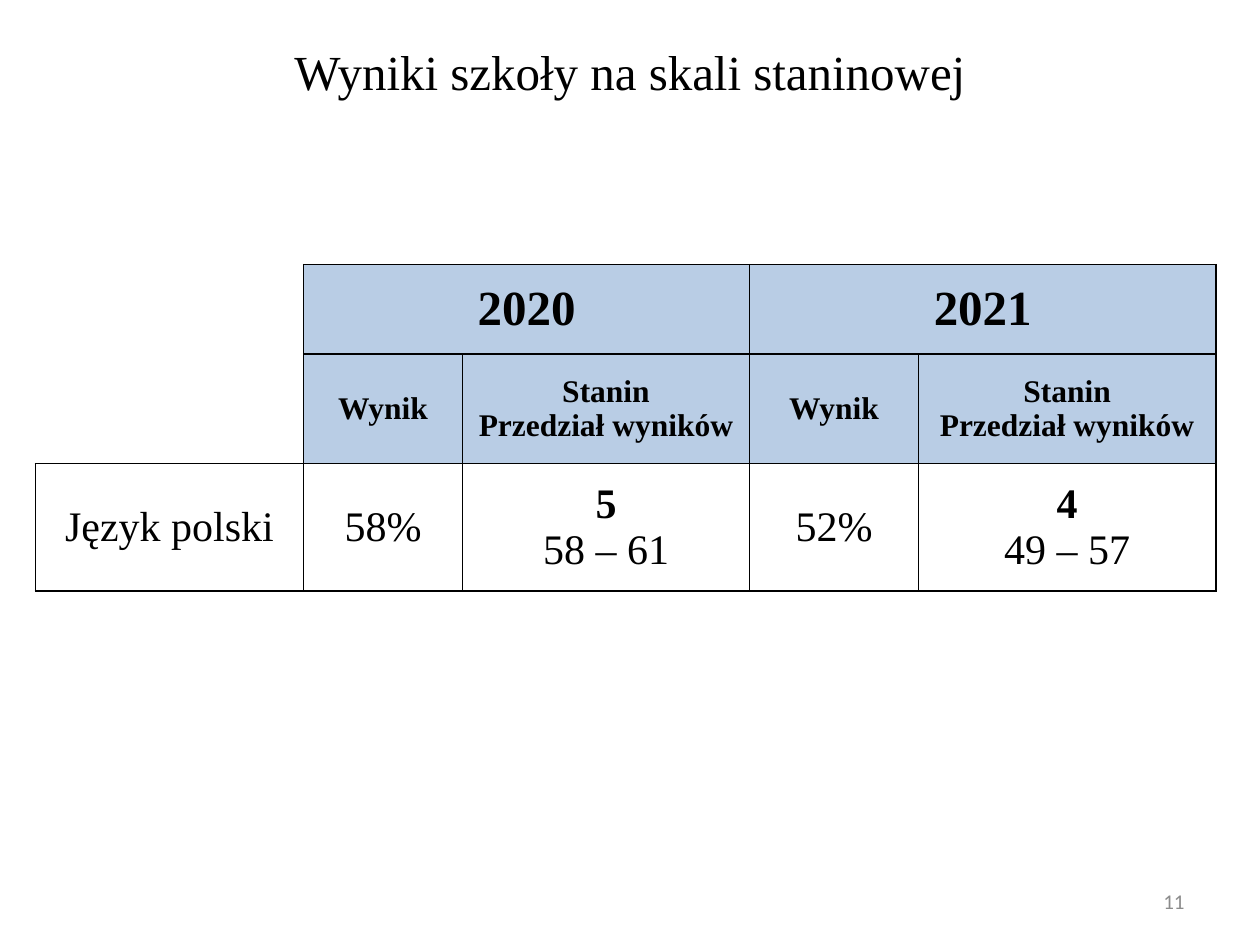
from lxml import etree
from pptx import Presentation
from pptx import util as u
from pptx.dml.color import RGBColor
from pptx.enum import text
from pptx.oxml.ns import qn

BLACK = RGBColor(0x00, 0x00, 0x00)
GREY = RGBColor(0x8C, 0x8C, 0x8C)
BLUE = RGBColor(0xB9, 0xCD, 0xE5)

MID = text.MSO_ANCHOR.MIDDLE
CENTER, RIGHT = text.PP_ALIGN.CENTER, text.PP_ALIGN.RIGHT
SIDES = ("left", "top", "right", "bottom")


class Deck:
    """Holds the text style and the current slide."""

    base = {"name": "Times New Roman", "size": u.Pt(24), "bold": False}

    def __init__(self, wide, high):
        self.prs = Presentation()
        self.prs.slide_width = u.Inches(wide)
        self.prs.slide_height = u.Inches(high)
        self.slide = self.prs.slides.add_slide(self.prs.slide_layouts[6])

    def put(self, frame, lines, align=CENTER, color=BLACK, **style):
        """Set (words, extra style) pairs, one paragraph each."""
        for i, (words, extra) in enumerate(lines):
            para = frame.paragraphs[0] if i == 0 else frame.add_paragraph()
            para.alignment = align
            run = para.add_run()
            run.text = words
            run.font.color.rgb = color
            for key, val in {**self.base, **style, **extra}.items():
                setattr(run.font, key, val)

    def label(self, at, words, pads, anchor, **style):
        box = self.slide.shapes.add_textbox(*map(u.Inches, at))
        frame = box.text_frame
        frame.word_wrap = True
        frame.vertical_anchor = anchor
        for side, pad in zip(SIDES, pads):
            setattr(frame, "margin_" + side, u.Inches(pad))
        self.put(frame, [(words, {})], **style)

    def table(self, left, top, cols, rows):
        shape = self.slide.shapes.add_table(
            len(rows), len(cols), u.Inches(left), u.Inches(top),
            u.Inches(sum(cols)), u.Inches(sum(rows)))
        grid = shape.table
        grid.first_row = grid.horz_banding = False
        for col, wide in zip(grid.columns, cols):
            col.width = u.Inches(wide)
        for row, high in zip(grid.rows, rows):
            row.height = u.Inches(high)
        return grid

    def edge(self, cell, sides="LRTB"):
        """Draw black 1 pt borders on the given sides."""
        props = cell._tc.get_or_add_tcPr()
        for side in sides:
            line = etree.SubElement(props, qn("a:ln" + side), w=str(u.Pt(1)))
            fill = etree.SubElement(line, qn("a:solidFill"))
            etree.SubElement(fill, qn("a:srgbClr"), val=str(BLACK))

    def cell(self, cell, lines, fill=None, **style):
        cell.vertical_anchor = MID
        for side in SIDES:
            setattr(cell, "margin_" + side, u.Inches(0.1))
        if fill is not None:
            cell.fill.solid()
            cell.fill.fore_color.rgb = fill
        self.put(cell.text_frame, lines, **style)


def main():
    deck = Deck(10, 7.5)

    # Title
    deck.label((0, 0, 10, 1.07), "Wyniki szkoły na skali staninowej",
               (0.59, 0.39, 0.59, 0.2), text.MSO_ANCHOR.TOP, size=u.Pt(28))

    # Table grid: empty corner, the rest framed
    grid = deck.table(0.28, 2.1, (2.13, 1.26, 2.28, 1.34, 2.36),
                      (0.71, 0.87, 1.01))
    for r in range(3):
        for c in range(5):
            corner = c == 0 and r < 2
            deck.edge(grid.cell(r, c), "RB" if corner else "LRTB")
            grid.cell(r, c).fill.background()
    grid.cell(0, 0).merge(grid.cell(1, 0))

    # One pair of columns per year
    head = {"fill": BLUE, "bold": True}
    years = (("2020", "58%", "5", "58 – 61"), ("2021", "52%", "4", "49 – 57"))
    for c, (year, score, stanine, span) in zip((1, 3), years):
        grid.cell(0, c).merge(grid.cell(0, c + 1))
        deck.cell(grid.cell(0, c), [(year, {})], size=u.Pt(28), **head)
        deck.cell(grid.cell(1, c), [("Wynik", {})], size=u.Pt(18), **head)
        deck.cell(grid.cell(1, c + 1),
                  [("Stanin", {}), ("Przedział wyników", {})],
                  size=u.Pt(18), **head)
        deck.cell(grid.cell(2, c), [(score, {})])
        deck.cell(grid.cell(2, c + 1), [(stanine, {"bold": True}), (span, {})])
    deck.cell(grid.cell(2, 0), [("Język polski", {})])

    # Page number
    deck.label((7.17, 6.95, 2.33, 0.4), "11", (0.1, 0.05, 0.1, 0.05), MID,
               align=RIGHT, color=GREY, name="Calibri", size=u.Pt(12))

    deck.prs.save("out.pptx")


if __name__ == "__main__":
    main()
